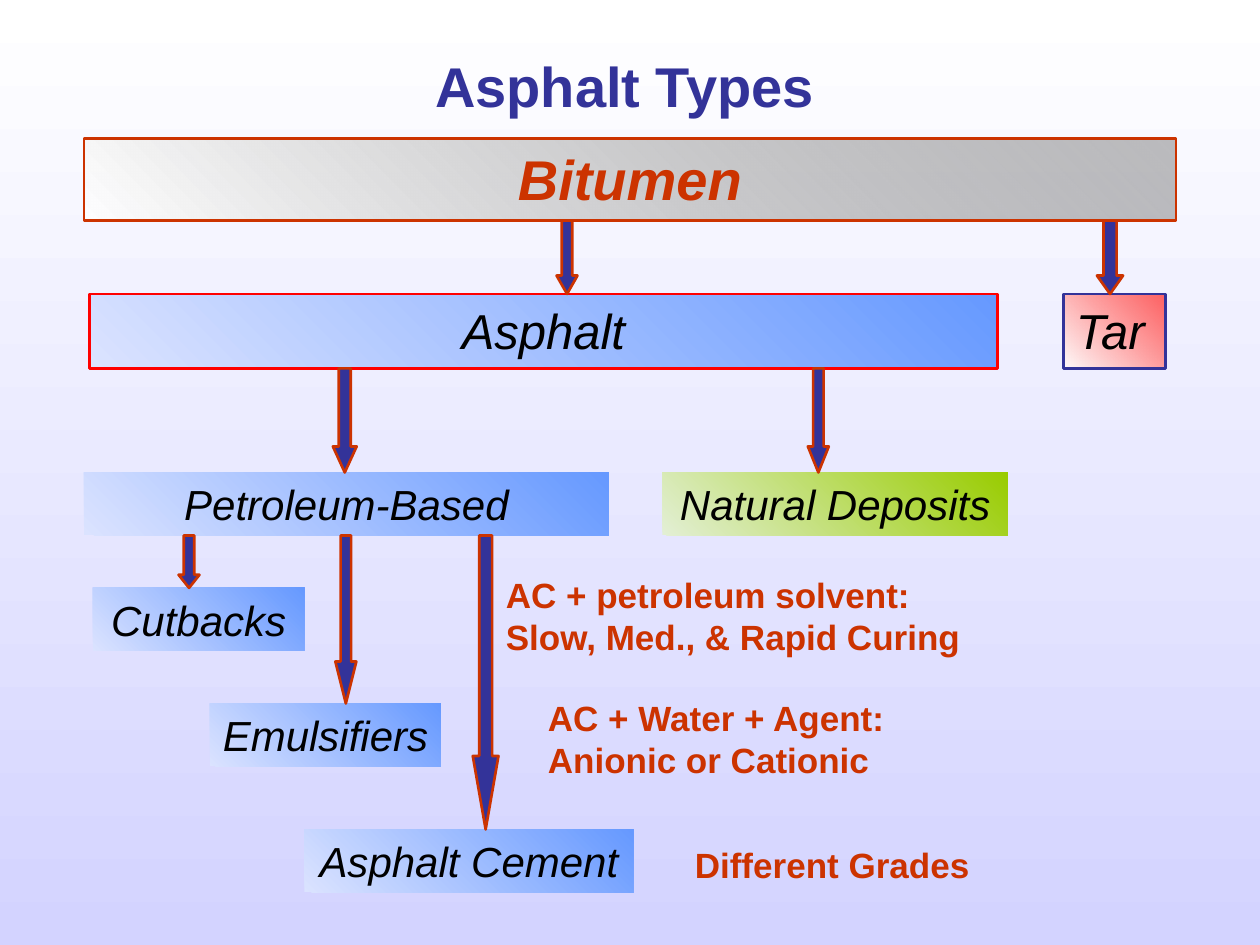
from collections import namedtuple

from lxml import etree
from pptx import Presentation
from pptx.dml.color import RGBColor
from pptx.enum.shapes import MSO_SHAPE as Shape
from pptx.enum.text import MSO_ANCHOR as Anchor, MSO_AUTO_SIZE as AutoSize, PP_ALIGN as Align
from pptx.oxml.ns import qn
from pptx.util import Pt

Box = namedtuple("Box", "left top width height")
Style = namedtuple("Style", "light dark opacity border")

FONT = "Arial"
NAVY, RUST, BLACK = "333399", "CC3300", "000000"
GRAY = Style("FFFFFF", "808080", 51, RUST)
BLUE = Style("DBE3FF", "6699FF", 100, None)
BLUE_FRAMED = BLUE._replace(border="FF0000")
RED = Style("FFFBFB", "FF5050", 90, NAVY)
GREEN = Style("E3EFD5", "99CC00", 100, None)

# name: box within the tree, style, text size
NODES = {
    "Bitumen": (Box(0, 0, 624, 47), GRAY, 32),
    "Asphalt": (Box(3, 89, 519, 42.5), BLUE_FRAMED, 28),
    "Tar": (Box(559.7, 89, 58.3, 42.5), RED, 28),
    "Petroleum-Based": (Box(0, 191, 300, 36), BLUE, 24),
    "Natural Deposits": (Box(330.5, 191, 197.5, 36), GREEN, 24),
    "Cutbacks": (Box(5, 257, 121, 36), BLUE, 24),
    "Emulsifiers": (Box(72, 323, 132, 36), BLUE, 24),
    "Asphalt Cement": (Box(126, 395, 188, 36), BLUE, 24),
}
# parent, child, centre within the tree, thickness
LINKS = [
    ("Bitumen", "Asphalt", 276, 12),
    ("Bitumen", "Tar", 586.3, 15),
    ("Asphalt", "Petroleum-Based", 149, 13.6),
    ("Asphalt", "Natural Deposits", 419.6, 12),
    ("Petroleum-Based", "Cutbacks", 60, 12),
    ("Petroleum-Based", "Emulsifiers", 149.6, 12),
    ("Petroleum-Based", "Asphalt Cement", 229.5, 14.7),
]
# box within the notes, lines
NOTES = [
    (Box(0, 0, 388, 55.5), ["AC + petroleum solvent:", "Slow, Med., & Rapid Curing"]),
    (Box(24, 70.7, 281.5, 55.5), ["AC + Water + Agent:", "Anionic or Cationic"]),
    (Box(108, 154.5, 310, 31), ["Different Grades"]),
]


def color(value):
    return RGBColor.from_string(value)


def place(box):
    return [Pt(length) for length in box]


def shift(box, region):
    return box._replace(left=region.left + box.left, top=region.top + box.top)


def fill_gradient(fill, light, dark, angle):
    """Blend light into dark; the angle runs counter-clockwise."""
    fill.gradient()
    fill.gradient_angle = angle
    first, last = fill.gradient_stops
    first.color.rgb = color(light)
    last.color.rgb = color(dark)


def fade_last_stop(shape, opacity):
    stops = shape._element.spPr.find(qn("a:gradFill")).findall(".//" + qn("a:srgbClr"))
    etree.SubElement(stops[-1], qn("a:alpha"), val=str(opacity * 1000))


def outline(shape, value):
    if value:
        shape.line.color.rgb = color(value)
        shape.line.width = Pt(1.5)
    else:
        shape.line.fill.background()


def write(shape, lines, size, ink, align, bold=False, italic=False):
    frame = shape.text_frame
    frame.word_wrap = True
    frame.vertical_anchor = Anchor.TOP
    frame.auto_size = AutoSize.SHAPE_TO_FIT_TEXT
    for index, line in enumerate(lines):
        para = frame.add_paragraph() if index else frame.paragraphs[0]
        para.alignment = align
        span = para.add_run()
        span.text = line
        font = span.font
        font.name, font.size = FONT, Pt(size)
        font.bold, font.italic = bold, italic
        font.color.rgb = color(ink)


def add_node(page, box, name, style, size):
    node = page.shapes.add_shape(Shape.RECTANGLE, *place(box))
    node.shadow.inherit = False
    fill_gradient(node.fill, style.light, style.dark, 45)
    if style.opacity < 100:
        fade_last_stop(node, style.opacity)
    outline(node, style.border)
    top_level = name == "Bitumen"
    align = Align.LEFT if name == "Tar" else Align.CENTER
    write(node, [name], size, RUST if top_level else BLACK, align, top_level, True)
    node.text_frame.word_wrap = name != "Tar"


def add_down_arrow(page, center, top, length, thickness):
    """Turn a right arrow a quarter; its head takes a quarter of the length."""
    box = Box(center - length / 2, top + (length - thickness) / 2, length, thickness)
    arrow = page.shapes.add_shape(Shape.RIGHT_ARROW, *place(box))
    arrow.rotation = 90
    arrow.adjustments[0] = 0.5
    arrow.adjustments[1] = length / 4 / thickness
    arrow.shadow.inherit = False
    arrow.fill.solid()
    arrow.fill.fore_color.rgb = color(NAVY)
    outline(arrow, RUST)


def draw_title(page, region):
    title = page.shapes.add_textbox(*place(region))
    write(title, ["Asphalt Types"], 32, NAVY, Align.CENTER, bold=True)
    title.text_frame.auto_size = AutoSize.NONE
    title.text_frame.vertical_anchor = Anchor.MIDDLE


def draw_tree(page, region):
    for name, (box, style, size) in NODES.items():
        add_node(page, shift(box, region), name, style, size)
    for parent, child, center, thickness in LINKS:
        start = NODES[parent][0].top + NODES[parent][0].height
        length = NODES[child][0].top - start
        add_down_arrow(page, region.left + center, region.top + start, length, thickness)


def draw_notes(page, region):
    for box, lines in NOTES:
        note = page.shapes.add_textbox(*place(shift(box, region)))
        write(note, lines, 20, RUST, Align.LEFT, bold=True)


def main():
    deck = Presentation()
    deck.slide_width, deck.slide_height = Pt(720), Pt(540)
    page = deck.slides.add_slide(deck.slide_layouts[6])
    fill_gradient(page.background.fill, "FFFFFF", "D3D3FF", 270)
    draw_title(page, Box(51, 26, 612, 45.4))
    draw_tree(page, Box(48, 79, 624, 431))
    draw_notes(page, Box(282, 324, 418, 185.5))
    deck.save("out.pptx")


if __name__ == "__main__":
    main()
